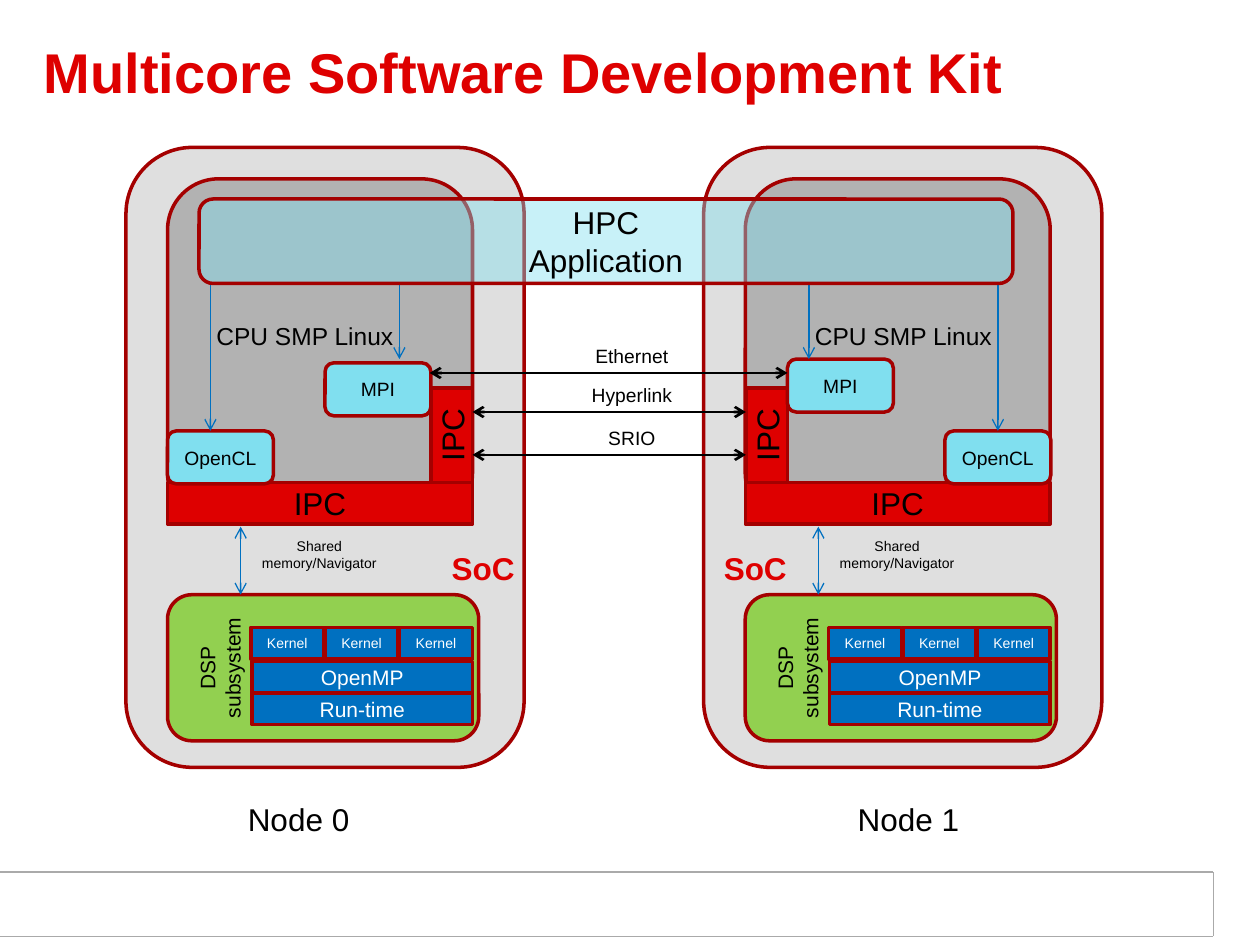
from pptx import Presentation
from pptx.dml.color import RGBColor
from pptx.enum.shapes import MSO_CONNECTOR, MSO_SHAPE
from pptx.enum.text import MSO_ANCHOR, PP_ALIGN
from pptx.oxml.ns import qn
from pptx.util import Inches, Pt
from lxml import etree

RECT = MSO_SHAPE.RECTANGLE
ROUND = MSO_SHAPE.ROUNDED_RECTANGLE
LINE = MSO_CONNECTOR.STRAIGHT
MID, TOP = MSO_ANCHOR.MIDDLE, MSO_ANCHOR.TOP
LEFT, MIDST = PP_ALIGN.LEFT, PP_ALIGN.CENTER
FONT = "Arial"
HUES = {
    "red": "DE0000", "edge": "A40000", "white": "FFFFFF", "black": "000000",
    "pale": "DFDFDF", "grey": "B2B2B2", "rule": "AAAAAA", "green": "92D050",
    "blue": "0070C0", "aqua": "80DFEF",
}
STEP = 4.585


def hue(name):
    return RGBColor.from_string(HUES[name])


def write(shape, text, size=18, color="black", bold=False, align=MIDST,
          anchor=MID, space=None):
    frame = shape.text_frame
    frame.word_wrap = True
    frame.vertical_anchor = anchor
    for i, part in enumerate(text.split("\n")):
        para = frame.add_paragraph() if i else frame.paragraphs[0]
        para.alignment = align
        para.line_spacing = space
        run = para.add_run()
        run.text = part
        run.font.name = FONT
        run.font.size = Pt(size)
        run.font.bold = bold
        run.font.color.rgb = hue(color)


def label(slide, text, x, y, w, h, turn=0, anchor=TOP, **form):
    box = slide.shapes.add_textbox(Inches(x), Inches(y), Inches(w), Inches(h))
    box.rotation = turn
    write(box, text, anchor=anchor, **form)


def block(slide, kind, fill, x, y, w, h, text="", turn=0, edge="edge",
          alpha=None, **form):
    shape = slide.shapes.add_shape(kind, Inches(x), Inches(y), Inches(w), Inches(h))
    shape.shadow.inherit = False
    shape.rotation = turn
    shape.fill.solid()
    shape.fill.fore_color.rgb = hue(fill)
    if alpha:
        tint = shape.fill._xPr.find(".//" + qn("a:srgbClr"))
        etree.SubElement(tint, qn("a:alpha"), val=str(alpha * 1000))
    if edge:
        shape.line.color.rgb = hue(edge)
        shape.line.width = Pt(2)
    else:
        shape.line.fill.background()
    if text:
        write(shape, text, **form)
    return shape


def wire(slide, x1, y1, x2, y2, color="blue", width=0.75, ends=("tailEnd",)):
    line = slide.shapes.add_connector(
        LINE, Inches(x1), Inches(y1), Inches(x2), Inches(y2))
    line.line.color.rgb = hue(color)
    line.line.width = Pt(width)
    pen = line.line._get_or_add_ln()
    for end in ends:
        etree.SubElement(pen, qn("a:" + end), type="arrow")
    etree.SubElement(line._element.spPr, qn("a:effectLst"))
    return line


def footer(slide):
    block(slide, RECT, "white", 0.05, 6.92, 9.56, 0.5, edge=None)
    for ends in ((0, 7.43, 9.63, 7.43), (0, 6.92, 9.63, 6.92),
                 (9.63, 7.43, 9.63, 6.92)):
        wire(slide, *ends, color="rule", ends=())


def node(slide, dx, side, name, mpi, cl):
    block(slide, ROUND, "pale", 1 + dx, 1.17, 3.16, 4.92)
    block(slide, ROUND, "green", 1.33 + dx, 4.72, 2.47, 1.16)
    for i, text in enumerate(("OpenMP", "Run-time")):
        block(slide, RECT, "blue", 2 + dx, 5.25 + 0.25 * i, 1.75, 0.25, text,
              size=12, color="white")
    for i in range(3):
        block(slide, RECT, "blue", 1.99 + dx + 0.59 * i, 4.98, 0.58, 0.25,
              "Kernel", size=8, color="white")
    label(slide, "DSP subsystem", 1.16 + dx, 5.05, 1.17, 0.5, turn=270, size=12)
    block(slide, ROUND, "grey", 1.33 + dx, 1.42, 2.42, 2.74)
    block(slide, RECT, "red", 1.33 + dx, 3.83, 2.42, 0.33, "IPC")
    block(slide, RECT, "red", side, 3.29, 0.75, 0.33, "IPC", turn=270)
    label(slide, "CPU SMP Linux", name, 2.5, 1.7, 0.34, size=14)
    block(slide, ROUND, "aqua", *mpi, 0.84, 0.42, "MPI", size=11)
    label(slide, "Shared memory/Navigator", 1.91 + dx, 4.22, 1.25, 0.37, size=8)
    wire(slide, 1.91 + dx, 4.18, 1.91 + dx, 4.72, ends=("headEnd", "tailEnd"))
    return block(slide, ROUND, "aqua", cl, 3.42, 0.84, 0.42, "OpenCL", size=11)


def links(slide):
    for text, top, y, x1, x2 in (("Ethernet", 2.68, 2.96, 3.41, 6.25),
                                 ("Hyperlink", 2.99, 3.27, 3.75, 5.92),
                                 ("SRIO", 3.33, 3.61, 3.75, 5.92)):
        label(slide, text, 4.58, top, 0.87, 0.29, size=11)
        wire(slide, x1, y, x2, y, color="black", width=1.5,
             ends=("headEnd", "tailEnd"))


def main():
    deck = Presentation()
    deck.slide_width, deck.slide_height = Inches(10), Inches(7.5)
    slide = deck.slides.add_slide(deck.slide_layouts[6])
    footer(slide)
    label(slide, "Multicore Software Development Kit", 0.25, 0.16, 9.25, 0.89,
          anchor=MID, size=32, color="red", bold=True, align=LEFT, space=0.85)
    node(slide, 0, 3.21, 1.57, (2.58, 2.88), 1.33)
    open_cl = node(slide, STEP, 5.71, 6.32, (6.25, 2.85), 7.5)
    for x, w in ((3.46, 0.75), (5.58, 0.83)):
        label(slide, "SoC", x, 4.31, w, 0.4, color="red", bold=True)
    for x, y in ((1.67, 3.42), (3.17, 2.85), (6.42, 2.85)):
        wire(slide, x, 2.25, x, y)
    wire(slide, 7.92, 2.25, 7.92, 3.42).end_connect(open_cl, 0)
    links(slide)
    block(slide, ROUND, "aqua", 1.58, 1.58, 6.46, 0.67, "HPC\nApplication",
          alpha=43)
    for i, x in enumerate((1.49, 6.33)):
        label(slide, f"Node {i}", x, 6.3, 1.76, 0.4)
    deck.save("out.pptx")


if __name__ == "__main__":
    main()
